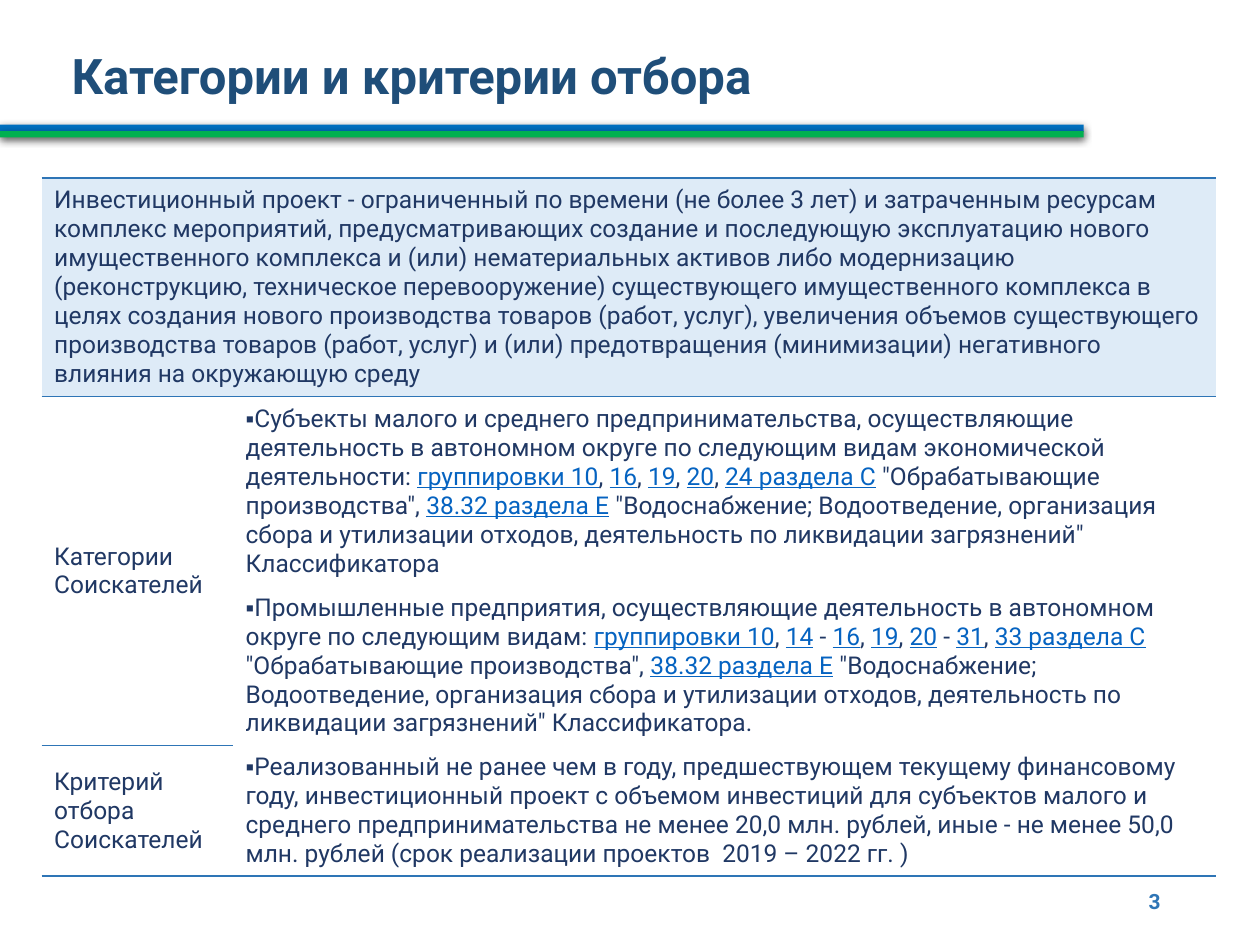
from lxml.etree import SubElement, fromstring
from pptx import Presentation
from pptx.dml.color import RGBColor
from pptx.enum.shapes import MSO_SHAPE
from pptx.enum.text import MSO_ANCHOR as Anchor, PP_ALIGN as Align
from pptx.oxml.ns import nsdecls, qn
from pptx.util import Inches, Pt

COLORS = {
    "title": "1F4E79", "body": "203864", "link": "0563C1", "line": "2E75B6",
    "blue": "0070C0", "green": "00B050", "panel": "DEEBF7",
}
FONT = "Roboto"
PLAIN_STYLE = "{2D5ABB26-0587-4C30-8999-92F81FD0307C}"
COLUMNS = [1.52, 7.8]
ROWS = [0.23, 1.71, 1.48, 1.25, 1.02]

DEFINITION = (
    "Инвестиционный проект - ограниченный по времени (не более 3 лет) и затраченным ресурсам "
    "комплекс мероприятий, предусматривающих создание и последующую эксплуатацию нового "
    "имущественного комплекса и (или) нематериальных активов либо модернизацию (реконструкцию, "
    "техническое перевооружение) существующего имущественного комплекса в целях создания нового "
    "производства товаров (работ, услуг), увеличения объемов существующего производства товаров "
    "(работ, услуг) и (или) предотвращения (минимизации) негативного влияния на окружающую среду"
)
SECTIONS = (
    ' "Обрабатывающие производства", |38.32 раздела E| "Водоснабжение; Водоотведение, организация '
    'сбора и утилизации отходов, деятельность по ликвидации загрязнений" Классификатора'
)
SMALL_BUSINESS = (
    "Субъекты малого и среднего предпринимательства, осуществляющие деятельность в автономном "
    "округе по следующим видам экономической деятельности: "
    "|группировки 10|, |16|, |19|, |20|, |24 раздела C|" + SECTIONS
)
INDUSTRY = (
    "Промышленные предприятия, осуществляющие деятельность в автономном округе по следующим видам: "
    "|группировки 10|, |14| - |16|, |19|, |20| - |31|, |33 раздела C|" + SECTIONS + "."
)
CRITERION = (
    "Реализованный не ранее чем в году, предшествующем текущему финансовому году, инвестиционный "
    "проект с объемом инвестиций для субъектов малого и среднего предпринимательства не менее "
    "20,0 млн. рублей, иные - не менее 50,0 млн. рублей (срок реализации проектов  2019 – 2022 гг. )"
)


def rgb(name):
    """Return the named palette colour."""
    return RGBColor.from_string(COLORS[name])


def add_run(paragraph, text, size, color, bold=False, underline=False):
    """Append one formatted run."""
    run = paragraph.add_run()
    run.text = text
    font = run.font
    font.name, font.size, font.bold = FONT, Pt(size), bold
    font.underline = underline
    font.color.rgb = rgb(color)


def add_label(slide, box, text, size, color, anchor, align=Align.LEFT, spacing=1.0):
    """Add a bold one-line text box."""
    frame = slide.shapes.add_textbox(*map(Inches, box)).text_frame
    frame.word_wrap = True
    frame.vertical_anchor = anchor
    paragraph = frame.paragraphs[0]
    paragraph.alignment = align
    paragraph.line_spacing = spacing
    add_run(paragraph, text, size, color, bold=True)


def add_stripe(group, top, height, color):
    """Add a coloured stripe with a soft shadow to the group."""
    shape = group.shapes.add_shape(
        MSO_SHAPE.RECTANGLE, 0, Inches(top), Inches(8.6), Inches(height))
    shape.fill.solid()
    shape.fill.fore_color.rgb = rgb(color)
    shape.line.fill.background()
    shape.shadow.inherit = False
    effects = shape._element.spPr.find(qn("a:effectLst"))
    effects.append(fromstring(
        f'<a:outerShdw {nsdecls("a")} blurRad="{Pt(4.5)}" dist="{Pt(1.5)}" dir="5400000" '
        'rotWithShape="0"><a:srgbClr val="000000"><a:alpha val="63000"/></a:srgbClr></a:outerShdw>'))


def fill_cell(cell, text, bullet=False):
    """Write text in a cell, with every second part between bars styled as a link."""
    cell.vertical_anchor = Anchor.MIDDLE
    paragraph = cell.text_frame.paragraphs[0]
    if bullet:
        properties = paragraph._p.get_or_add_pPr()
        properties.set("marL", "0")
        properties.set("indent", str(Inches(-0.31)))
        SubElement(properties, qn("a:buFont"), typeface="Arial")
        SubElement(properties, qn("a:buChar"), char="▪")
    for index, part in enumerate(text.split("|")):
        linked = index % 2 == 1
        add_run(paragraph, part, 14, "link" if linked else "body", underline=linked)


def add_border(cell, side):
    """Draw a thin line on the top (T) or bottom (B) of a cell."""
    cell._tc.get_or_add_tcPr().insert(0, fromstring(
        f'<a:ln{side} {nsdecls("a")} w="{Pt(1)}"><a:solidFill>'
        f'<a:srgbClr val="{COLORS["line"]}"/></a:solidFill></a:ln{side}>'))


def add_criteria_table(slide):
    """Add the table of applicant categories and selection criteria."""
    frame = slide.shapes.add_table(
        len(ROWS), len(COLUMNS), Inches(0.33), Inches(1.18),
        Inches(sum(COLUMNS)), Inches(sum(ROWS)))
    table = frame.table
    table.first_row = table.horz_banding = False
    table._tbl.tblPr.find(qn("a:tableStyleId")).text = PLAIN_STYLE
    for column, width in zip(table.columns, COLUMNS):
        column.width = Inches(width)
    for row, height in zip(table.rows, ROWS):
        row.height = Inches(height)
    for cell in table.iter_cells():
        cell.fill.background()
        SubElement(cell.text_frame.paragraphs[0]._p, qn("a:endParaRPr"), sz="800")

    for row in (0, 1):
        table.cell(row, 0).merge(table.cell(row, 1))
    table.cell(2, 0).merge(table.cell(3, 0))
    panel = table.cell(1, 0)
    panel.fill.solid()
    panel.fill.fore_color.rgb = rgb("panel")

    fill_cell(panel, DEFINITION)
    fill_cell(table.cell(2, 0), "Категории Соискателей")
    fill_cell(table.cell(4, 0), "Критерий отбора Соискателей")
    for row, text in enumerate((SMALL_BUSINESS, INDUSTRY, CRITERION), start=2):
        fill_cell(table.cell(row, 1), text, bullet=True)

    for row in (0, 4):
        for column in (0, 1):
            add_border(table.cell(row, column), "B")
    for row in (2, 4):
        add_border(table.cell(row, 0), "T")


def main():
    """Build and save the slide."""
    presentation = Presentation()
    presentation.slide_width, presentation.slide_height = Inches(10), Inches(7.5)
    slide = presentation.slides.add_slide(presentation.slide_layouts[6])
    add_label(slide, (0.47, 0.02, 7.33, 0.86), "Категории и критерии отбора",
              28, "title", Anchor.BOTTOM, spacing=0.9)
    group = slide.shapes.add_group_shape()
    add_stripe(group, 0.99, 0.06, "blue")
    add_stripe(group, 1.04, 0.05, "green")
    add_criteria_table(slide)
    add_label(slide, (7.06, 6.95, 2.25, 0.4), "3", 12, "line", Anchor.MIDDLE, Align.RIGHT)
    presentation.save("out.pptx")


if __name__ == "__main__":
    main()
